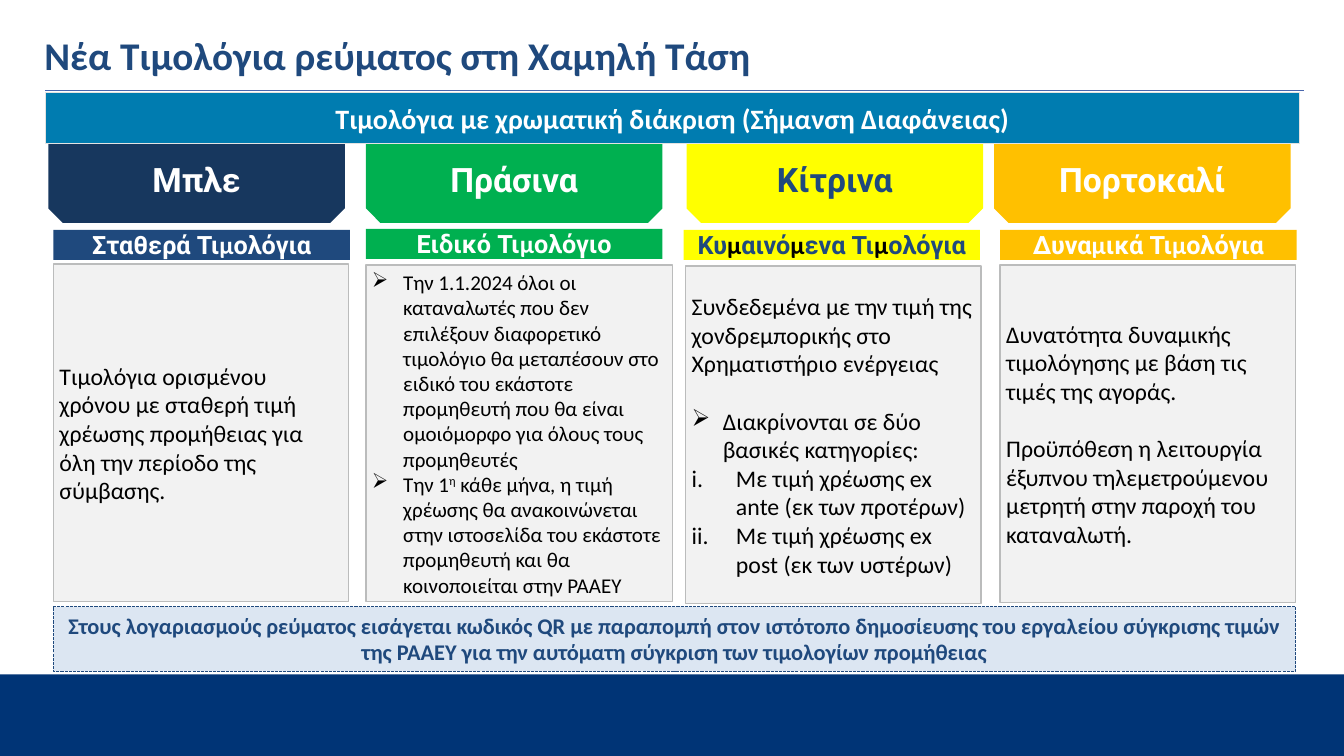
from dataclasses import dataclass
from typing import Optional

from lxml import etree
from pptx import Presentation
from pptx import util as u
from pptx.dml.color import RGBColor
from pptx.enum import dml, shapes, text
from pptx.oxml.ns import qn

PX = 9144  # EMU per px, 100 px to the inch

WHITE = RGBColor(0xFF, 0xFF, 0xFF)
BLACK = RGBColor(0x00, 0x00, 0x00)
NAVY = RGBColor(0x1F, 0x49, 0x7D)
DEEP = RGBColor(0x17, 0x37, 0x5E)
GREEN = RGBColor(0x00, 0xB0, 0x50)
YELLOW = RGBColor(0xFF, 0xFF, 0x00)
ORANGE = RGBColor(0xFF, 0xC0, 0x00)
TEAL = RGBColor(0x00, 0x7C, 0xB0)
BAND = RGBColor(0x00, 0x34, 0x76)
RULE = RGBColor(0x49, 0x66, 0xAC)
PANEL = RGBColor(0xF2, 0xF2, 0xF2)
EDGE = RGBColor(0xBB, 0xBC, 0xBC)
PALE = RGBColor(0xDC, 0xE6, 0xF2)
SILVER = RGBColor(0xE3, 0xE3, 0xE2)

MID, TOP = text.MSO_ANCHOR.MIDDLE, text.MSO_ANCHOR.TOP
RECT = shapes.MSO_SHAPE.RECTANGLE
SNIP = shapes.MSO_SHAPE.SNIP_2_SAME_RECTANGLE


@dataclass
class Run:
    text: str
    font: str = "Calibri"
    color: RGBColor = BLACK
    bold: bool = False
    sup: bool = False


@dataclass
class Para:
    runs: list[Run]
    mark: str = ""  # "➢" for an arrow, "i" for roman numerals
    gap: float = 0


@dataclass
class Box:
    left: int
    top: int
    width: int
    height: int


@dataclass
class Tariff:
    name: str
    kind: str
    head_fill: RGBColor
    tag_fill: RGBColor
    ink: RGBColor
    mu_ink: RGBColor
    head_left: int
    tag: Box
    body: Box
    size: int
    paras: list[Para]


TARIFFS = [
    Tariff("Μπλε", "Σταθερά Τιμολόγια", DEEP, NAVY, WHITE, WHITE, 48,
           Box(53, 228, 294, 30), Box(53, 262, 293, 335), 17,
           [Para([Run("Τιμολόγια ορισμένου χρόνου με σταθερή τιμή χρέωσης "
                      "προμήθειας για όλη την περίοδο της σύμβασης.")])]),
    Tariff("Πράσινα", "Ειδικό Τιμολόγιο", GREEN, GREEN, WHITE, WHITE, 363,
           Box(363, 227, 294, 30), Box(363, 263, 304, 334), 15,
           [Para([Run("Την 1.1.2024 όλοι οι καταναλωτές που δεν επιλέξουν "
                      "διαφορετικό τιμολόγιο θα μεταπέσουν στο ειδικό του "
                      "εκάστοτε προμηθευτή που θα είναι ομοιόμορφο για όλους "
                      "τους προμηθευτές")], "➢"),
            Para([Run("Την 1"), Run("η", sup=True),
                  Run(" κάθε μήνα, η τιμή χρέωσης θα ανακοινώνεται στην "
                      "ιστοσελίδα του εκάστοτε προμηθευτή και θα "
                      "κοινοποιείται στην ΡΑΑΕΥ")], "➢")]),
    Tariff("Κίτρινα", "Κυμαινόμενα Τιμολόγια", YELLOW, YELLOW, NAVY, BLACK, 681,
           Box(678, 228, 294, 30), Box(680, 264, 293, 335), 17,
           [Para([Run("Συνδεδεμένα με την τιμή της χονδρεμπορικής στο "
                      "Χρηματιστήριο ενέργειας")]),
            Para([Run("Διακρίνονται σε δύο βασικές κατηγορίες:")], "➢", 20.5),
            Para([Run("Με τιμή χρέωσης ex ante (εκ των προτέρων)")], "i"),
            Para([Run("Με τιμή χρέωσης ex post (εκ των υστέρων)")], "i")]),
    Tariff("Πορτοκαλί", "Δυναμικά Τιμολόγια", ORANGE, ORANGE, WHITE, WHITE, 986,
           Box(992, 228, 294, 30), Box(992, 263, 293, 335), 17,
           [Para([Run("Δυνατότητα δυναμικής τιμολόγησης με βάση τις τιμές "
                      "της αγοράς.")]),
            Para([Run("Προϋπόθεση η λειτουργία έξυπνου τηλεμετρούμενου "
                      "μετρητή στην παροχή του καταναλωτή.")], gap=20.5)]),
]


def place(box: Box) -> tuple[int, int, int, int]:
    return box.left * PX, box.top * PX, box.width * PX, box.height * PX


def add_shape(slide, box: Box, fill: RGBColor, line: Optional[RGBColor] = None,
              weight: float = 1, kind=RECT):
    shape = slide.shapes.add_shape(kind, *place(box))
    shape.shadow.inherit = False
    shape.fill.solid()
    shape.fill.fore_color.rgb = fill
    if line is None:
        shape.line.fill.background()
    else:
        shape.line.color.rgb = line
        shape.line.width = u.Pt(weight)
    return shape


def set_mark(para, mark: str) -> None:
    """Give the paragraph a hanging bullet or number."""
    props = para._p.get_or_add_pPr()
    hang = (44 if mark == "i" else 31) * PX
    props.set("marL", str(hang))
    props.set("indent", str(-hang))
    if mark == "i":
        etree.SubElement(props, qn("a:buAutoNum"), type="romanLcPeriod")
    else:
        etree.SubElement(props, qn("a:buChar"), char=mark)


def write(shape, paras: list[Para], size: int, pad: tuple[int, int] = (0, 0),
          anchor=MID, align=text.PP_ALIGN.CENTER) -> None:
    frame = shape.text_frame
    frame.word_wrap = True
    frame.vertical_anchor = anchor
    frame.margin_left = frame.margin_right = pad[0] * PX
    frame.margin_top = frame.margin_bottom = pad[1] * PX
    for i, item in enumerate(paras):
        para = frame.add_paragraph() if i else frame.paragraphs[0]
        para.alignment = align
        if item.gap:
            para.space_before = u.Pt(item.gap)
        if item.mark:
            set_mark(para, item.mark)
        for part in item.runs:
            run = para.add_run()
            run.text = part.text
            run.font.name = part.font
            run.font.size = u.Pt(size)
            run.font.bold = part.bold
            run.font.color.rgb = part.color
            if part.sup:
                run._r.get_or_add_rPr().set("baseline", "30000")


def bold(words: str, color: RGBColor, font: str = "Calibri") -> list[Para]:
    return [Para([Run(words, font, color, True)])]


def tag_runs(item: Tariff) -> list[Run]:
    """Set each μ in Calibri and the rest in Roboto."""
    runs = []
    for i, part in enumerate(item.kind.split("μ")):
        if i:
            runs.append(Run("μ", "Calibri", item.mu_ink, True))
        runs.append(Run(part, "Roboto", item.ink, True))
    return runs


def add_tariff(slide, item: Tariff) -> None:
    tag = add_shape(slide, item.tag, item.tag_fill)
    write(tag, [Para(tag_runs(item))], 18, anchor=TOP)
    body = add_shape(slide, item.body, PANEL, EDGE)
    write(body, item.paras, item.size, (6, 3), align=text.PP_ALIGN.LEFT)
    head = add_shape(slide, Box(item.head_left, 142, 294, 79),
                     item.head_fill, kind=SNIP)
    head.adjustments[0] = 0
    head.adjustments[1] = 0.18
    write(head, bold(item.name, item.ink, "Roboto"), 24, (10, 10))


def add_rule(slide) -> None:
    rule = slide.shapes.add_connector(shapes.MSO_CONNECTOR.STRAIGHT,
                                      45 * PX, 90 * PX, 1293 * PX, 90 * PX)
    rule.line.color.rgb = RULE
    rule.line.width = u.Pt(0.96)
    etree.SubElement(rule._element.spPr, qn("a:effectLst"))


def main() -> None:
    deck = Presentation()
    deck.slide_width, deck.slide_height = 1333 * PX, 750 * PX
    slide = deck.slides.add_slide(deck.slide_layouts[6])
    add_shape(slide, Box(0, 669, 1333, 81), BAND)
    add_rule(slide)
    for item in TARIFFS:
        add_tariff(slide, item)
    banner = add_shape(slide, Box(45, 92, 1244, 50), TEAL, SILVER, 0.75)
    write(banner, bold("Τιμολόγια με χρωματική διάκριση (Σήμανση Διαφάνειας)",
                       WHITE), 20, (10, 8))
    title = slide.shapes.add_textbox(*place(Box(44, 25, 1244, 58)))
    write(title, bold("Νέα Τιμολόγια ρεύματος στη Χαμηλή Τάση", NAVY), 28,
          align=text.PP_ALIGN.LEFT)
    note = add_shape(slide, Box(53, 602, 1232, 64), PALE, NAVY, 0.75)
    note.line.dash_style = dml.MSO_LINE.SQUARE_DOT
    write(note, bold("Στους λογαριασμούς ρεύματος εισάγεται κωδικός QR με "
                     "παραπομπή στον ιστότοπο δημοσίευσης του εργαλείου "
                     "σύγκρισης τιμών της ΡΑΑΕΥ για την αυτόματη σύγκριση "
                     "των τιμολογίων προμήθειας", NAVY), 16, (10, 5), TOP)
    deck.save("out.pptx")


if __name__ == "__main__":
    main()
